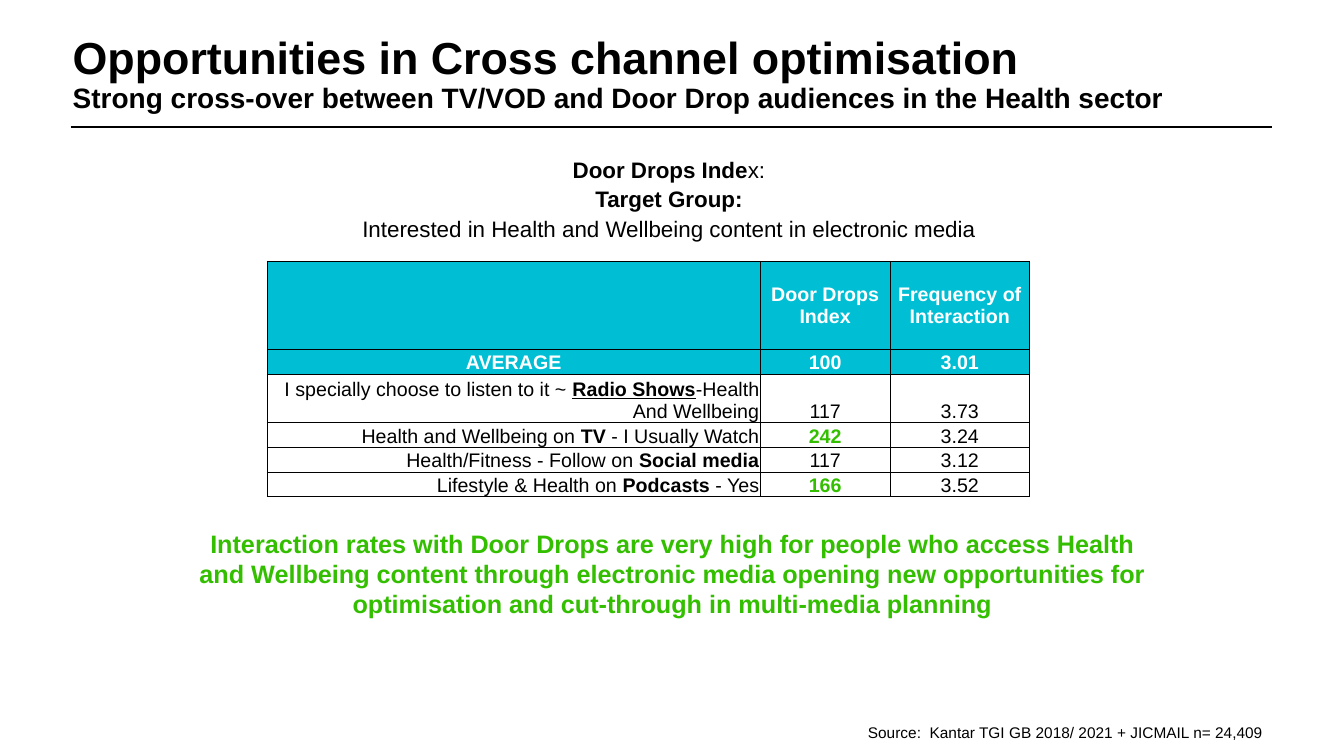
from dataclasses import dataclass

from lxml.etree import SubElement
from pptx import Presentation
from pptx.dml.color import RGBColor
from pptx.enum.shapes import MSO_CONNECTOR as Connector
from pptx.enum.text import MSO_ANCHOR as Anchor, PP_ALIGN as Align
from pptx.oxml.ns import qn
from pptx.slide import Slide
from pptx.table import _Cell as Cell
from pptx.text.text import TextFrame
from pptx.util import Emu, Pt

BLACK = RGBColor(0x00, 0x00, 0x00)
WHITE = RGBColor(0xFF, 0xFF, 0xFF)
TEAL = RGBColor(0x00, 0xBF, 0xD5)
GREEN = RGBColor(0x33, 0xBF, 0x00)
FONT = "Arial"
EMU_PER_PX = 9144


@dataclass(frozen=True)
class Span:
    text: str
    bold: bool = False
    underline: bool = False
    color: RGBColor = BLACK


@dataclass(frozen=True)
class Line:
    spans: tuple[Span, ...]
    size: int
    align: Align = Align.LEFT
    spacing: float = 1.0


@dataclass(frozen=True)
class Block:
    left: int
    top: int
    width: int
    height: int
    lines: tuple[Line, ...]
    inset: bool = True


@dataclass(frozen=True)
class Channel:
    label: tuple[Span, ...]
    index: str
    frequency: str
    height: int = 24
    highlight: bool = False


def px(length: int) -> Emu:
    return Emu(length * EMU_PER_PX)


def bold(text: str, color: RGBColor = BLACK) -> Span:
    return Span(text, bold=True, color=color)


def write_lines(frame: TextFrame, lines: tuple[Line, ...]) -> None:
    for number, line in enumerate(lines):
        para = frame.add_paragraph() if number else frame.paragraphs[0]
        para.alignment = line.align
        para.line_spacing = line.spacing
        for span in line.spans:
            run = para.add_run()
            run.text = span.text
            run.font.name = FONT
            run.font.size = Pt(line.size)
            run.font.bold = span.bold
            run.font.underline = span.underline
            run.font.color.rgb = span.color


def add_block(page: Slide, block: Block) -> None:
    box = page.shapes.add_textbox(px(block.left), px(block.top), px(block.width), px(block.height))
    frame = box.text_frame
    frame.word_wrap = True
    if not block.inset:
        frame.margin_left = frame.margin_right = frame.margin_top = frame.margin_bottom = 0
    write_lines(frame, block.lines)


def add_rule(page: Slide, left: int, right: int, top: int) -> None:
    rule = page.shapes.add_connector(Connector.STRAIGHT, px(left), px(top), px(right), px(top))
    rule.line.color.rgb = BLACK
    rule.line.width = Pt(1.25)
    SubElement(rule._element.spPr, qn("a:effectLst"))


def add_borders(cell: Cell) -> None:
    properties = cell._tc.get_or_add_tcPr()
    for side in ("lnL", "lnR", "lnT", "lnB"):
        border = SubElement(properties, qn(f"a:{side}"), w=str(Pt(0.5)))
        fill = SubElement(border, qn("a:solidFill"))
        SubElement(fill, qn("a:srgbClr"), val=str(BLACK))


def fill_cell(cell: Cell, lines: tuple[Line, ...], header: bool) -> None:
    cell.margin_left = cell.margin_right = cell.margin_top = px(1)
    cell.margin_bottom = 0
    cell.vertical_anchor = Anchor.MIDDLE if header else Anchor.BOTTOM
    add_borders(cell)
    if header:
        cell.fill.solid()
        cell.fill.fore_color.rgb = TEAL
    else:
        cell.fill.background()
    write_lines(cell.text_frame, lines)


def table_line(*spans: Span, align: Align = Align.CENTER) -> Line:
    return Line(spans, 14, align)


def header_cell(*texts: str) -> tuple[Line, ...]:
    return tuple(table_line(bold(text, WHITE)) for text in texts)


def channel_cells(channel: Channel) -> list[tuple[Line, ...]]:
    index = bold(channel.index, GREEN) if channel.highlight else Span(channel.index)
    return [
        (table_line(*channel.label, align=Align.RIGHT),),
        (table_line(index),),
        (table_line(Span(channel.frequency)),),
    ]


HEADERS = [
    [(), header_cell("Door Drops", "Index"), header_cell("Frequency of Interaction")],
    [header_cell("AVERAGE"), header_cell("100"), header_cell("3.01")],
]
CHANNELS = [
    Channel((Span("I specially choose to listen to it ~ "),
             Span("Radio Shows", bold=True, underline=True),
             Span("-Health And Wellbeing")), "117", "3.73", height=48),
    Channel((Span("Health and Wellbeing on "), bold("TV"), Span(" - I Usually Watch")),
            "242", "3.24", highlight=True),
    Channel((Span("Health/Fitness - Follow on "), bold("Social media")), "117", "3.12"),
    Channel((Span("Lifestyle & Health on "), bold("Podcasts"), Span(" - Yes")),
            "166", "3.52", highlight=True),
]
COLUMN_WIDTHS = [489, 129, 138]
ROW_HEIGHTS = [88, 24] + [channel.height for channel in CHANNELS]

TITLE = Block(72, 36, 1211, 76, (
    Line((bold("Opportunities in Cross channel optimisation"),), 32, spacing=0.9),
    Line((bold("Strong cross-over between TV/VOD and Door Drop audiences in the Health sector"),),
         20, spacing=0.9),
), inset=False)
TARGET_GROUP = Block(273, 147, 781, 95, tuple(
    Line(spans, 16, Align.CENTER, 1.1) for spans in (
        (bold("Door Drops Inde"), Span("x:")),
        (bold("Target Group:"),),
        (Span("Interested in Health and Wellbeing content in electronic media"),),
    )))
CONCLUSION = Block(178, 519, 978, 101, (Line((bold(
    "Interaction rates with Door Drops are very high for people who access Health and Wellbeing "
    "content through electronic media opening new opportunities for optimisation and cut-through "
    "in multi-media planning", GREEN),), 18, Align.CENTER),))
SOURCE = Block(851, 711, 480, 29, (
    Line((Span("Source:  Kantar TGI GB 2018/ 2021 + JICMAIL n= 24,409"),), 11, spacing=1.07),))


def add_index_table(page: Slide, left: int, top: int) -> None:
    rows = HEADERS + [channel_cells(channel) for channel in CHANNELS]
    table = page.shapes.add_table(len(rows), len(COLUMN_WIDTHS), px(left), px(top),
                                  px(sum(COLUMN_WIDTHS)), px(sum(ROW_HEIGHTS))).table
    table.first_row = table.horz_banding = False
    for column, width in zip(table.columns, COLUMN_WIDTHS):
        column.width = px(width)
    for number, (row, height, cells) in enumerate(zip(table.rows, ROW_HEIGHTS, rows)):
        row.height = px(height)
        for cell, lines in zip(row.cells, cells):
            fill_cell(cell, lines, header=number < len(HEADERS))


def main() -> None:
    deck = Presentation()
    deck.slide_width, deck.slide_height = px(1333), px(750)
    page = deck.slides.add_slide(deck.slide_layouts[6])
    add_rule(page, 70, 1262, 126)
    for block in (TITLE, TARGET_GROUP, CONCLUSION, SOURCE):
        add_block(page, block)
    add_index_table(page, 265, 259)
    deck.save("out.pptx")


if __name__ == "__main__":
    main()
